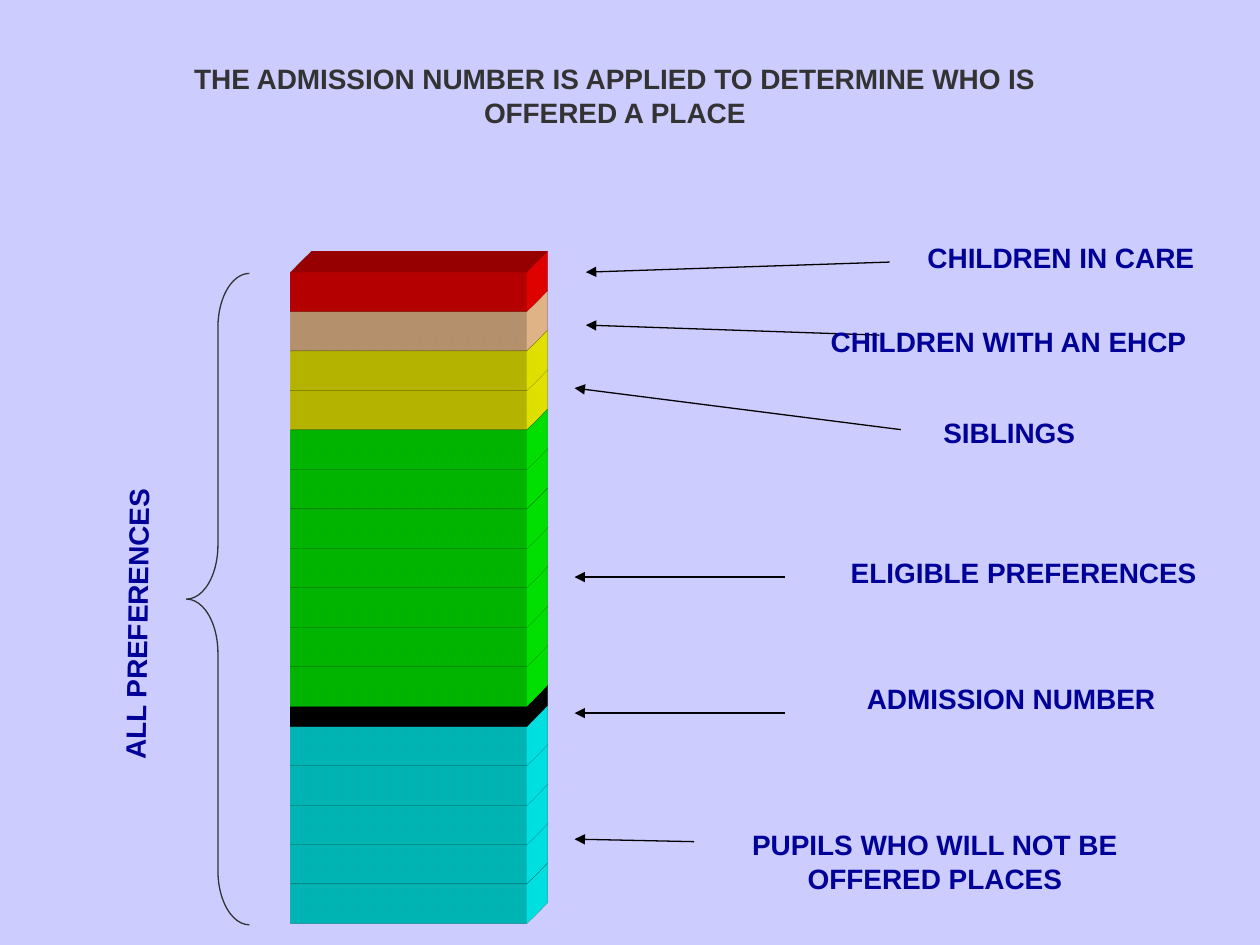
from lxml.etree import SubElement
from pptx import Presentation
from pptx.dml.color import RGBColor
from pptx.enum.shapes import MSO_CONNECTOR, MSO_SHAPE
from pptx.enum.text import MSO_ANCHOR, MSO_AUTO_SIZE, PP_ALIGN
from pptx.oxml import parse_xml
from pptx.oxml.ns import nsdecls, qn
from pptx.util import Inches, Pt

BACKGROUND, NAVY, GREY, BLACK = "CCCCFF", "000099", "333333", "000000"
STACK_LEFT, STACK_TOP, STACK_BOTTOM, STACK_WIDTH = 2.31, 2.16, 7.33, 1.87

# Colour, number of blocks and block height in units, from the top down
LAYERS = [
    ("FF0000", 1, 1),
    ("FFCC99", 1, 1),
    ("FFFF00", 2, 1),
    ("00FF00", 7, 1),
    (BLACK, 1, 0.5),
    ("00FFFF", 5, 1),
]

# Text, box (left, top, width, height), arrow start, arrow end
LABELS = [
    ("CHILDREN IN CARE", (7.26, 1.86, 2.32, 0.37), (7.06, 2.08), (4.65, 2.16)),
    ("CHILDREN WITH AN EHCP", (6.48, 2.53, 3.05, 0.37), (6.98, 2.66), (4.65, 2.58)),
    ("SIBLINGS", (7.35, 3.25, 1.32, 0.4), (7.15, 3.41), (4.56, 3.08)),
    ("ELIGIBLE PREFERENCES", (6.65, 4.36, 2.95, 0.37), (6.23, 4.58), (4.56, 4.58)),
    ("ADMISSION NUMBER", (6.78, 5.36, 2.49, 0.37), (6.23, 5.66), (4.56, 5.66)),
    ("PUPILS WHO WILL NOT BE\nOFFERED PLACES", (5.83, 6.52, 3.18, 0.64),
     (5.51, 6.68), (4.56, 6.66)),
]


def color(value):
    return RGBColor.from_string(value)


def inches(values):
    return [Inches(value) for value in values]


def format_text(frame, text, text_color, wrap):
    frame.text = text
    frame.word_wrap = wrap
    frame.vertical_anchor = MSO_ANCHOR.TOP
    frame.auto_size = MSO_AUTO_SIZE.SHAPE_TO_FIT_TEXT
    for paragraph in frame.paragraphs:
        paragraph.alignment = PP_ALIGN.CENTER
        for span in paragraph.runs:
            span.font.name = "Arial"
            span.font.size = Pt(16)
            span.font.bold = True
            span.font.color.rgb = color(text_color)


def set_title(page, text):
    title = page.shapes.title
    format_text(title.text_frame, text, GREY, wrap=True)
    title.left, title.top, title.width, title.height = inches((1.06, 0.44, 7.64, 0.64))


def add_label(page, text, place, wrap=False):
    box = page.shapes.add_textbox(*inches(place))
    format_text(box.text_frame, text, NAVY, wrap)
    return box


def add_arrow(page, start, end):
    arrow = page.shapes.add_connector(MSO_CONNECTOR.STRAIGHT, *inches(start + end))
    arrow.line.color.rgb = color(BLACK)
    arrow.line.width = Pt(0.75)
    SubElement(arrow.line._get_or_add_ln(), qn("a:tailEnd"), type="triangle")
    SubElement(arrow._element.spPr, qn("a:effectLst"))


def extrude(shape, side_color):
    """Give the shape depth towards the upper right."""
    properties = shape._element.spPr
    properties.append(parse_xml(
        f'<a:scene3d {nsdecls("a")}><a:camera prst="legacyObliqueTopRight"/>'
        '<a:lightRig rig="legacyFlat3" dir="b"/></a:scene3d>'))
    properties.append(parse_xml(
        f'<a:sp3d {nsdecls("a")} extrusionH="430200" prstMaterial="legacyMatte">'
        '<a:bevelT w="13500" h="13500" prst="angle"/>'
        '<a:bevelB w="13500" h="13500" prst="angle"/>'
        f'<a:extrusionClr><a:srgbClr val="{side_color}"/></a:extrusionClr></a:sp3d>'))


def add_block(page, top, height, fill):
    block = page.shapes.add_shape(
        MSO_SHAPE.RECTANGLE, *inches((STACK_LEFT, top, STACK_WIDTH, height)))
    block.shadow.inherit = False
    block.fill.solid()
    block.fill.fore_color.rgb = color(fill)
    block.line.fill.background()
    extrude(block, fill)


def add_stack(page):
    """Build from the bottom up so that each block covers the top of the one below."""
    unit = (STACK_BOTTOM - STACK_TOP) / sum(count * size for _, count, size in LAYERS)
    top = STACK_BOTTOM
    for fill, count, size in reversed(LAYERS):
        for _ in range(count):
            top -= size * unit
            add_block(page, top, size * unit, fill)


def add_brace(page):
    brace = page.shapes.add_shape(MSO_SHAPE.LEFT_BRACE, *inches((1.48, 2.17, 0.5, 5.17)))
    brace.shadow.inherit = False
    brace.adjustments[0] = 0.86
    brace.fill.background()
    brace.line.color.rgb = color(GREY)
    brace.line.width = Pt(0.75)


def main():
    deck = Presentation()
    deck.slide_width, deck.slide_height = Inches(10), Inches(7.5)
    page = deck.slides.add_slide(deck.slide_layouts[5])
    page.background.fill.solid()
    page.background.fill.fore_color.rgb = color(BACKGROUND)

    set_title(page, "THE ADMISSION NUMBER IS APPLIED TO DETERMINE WHO IS OFFERED A PLACE")
    add_stack(page)
    for text, place, start, end in LABELS:
        add_arrow(page, start, end)
        add_label(page, text, place)
    add_brace(page)
    total = add_label(page, "ALL PREFERENCES", (-1.79, 4.77, 5.75, 0.37), wrap=True)
    total.rotation = 270.8

    deck.save("out.pptx")


if __name__ == "__main__":
    main()
